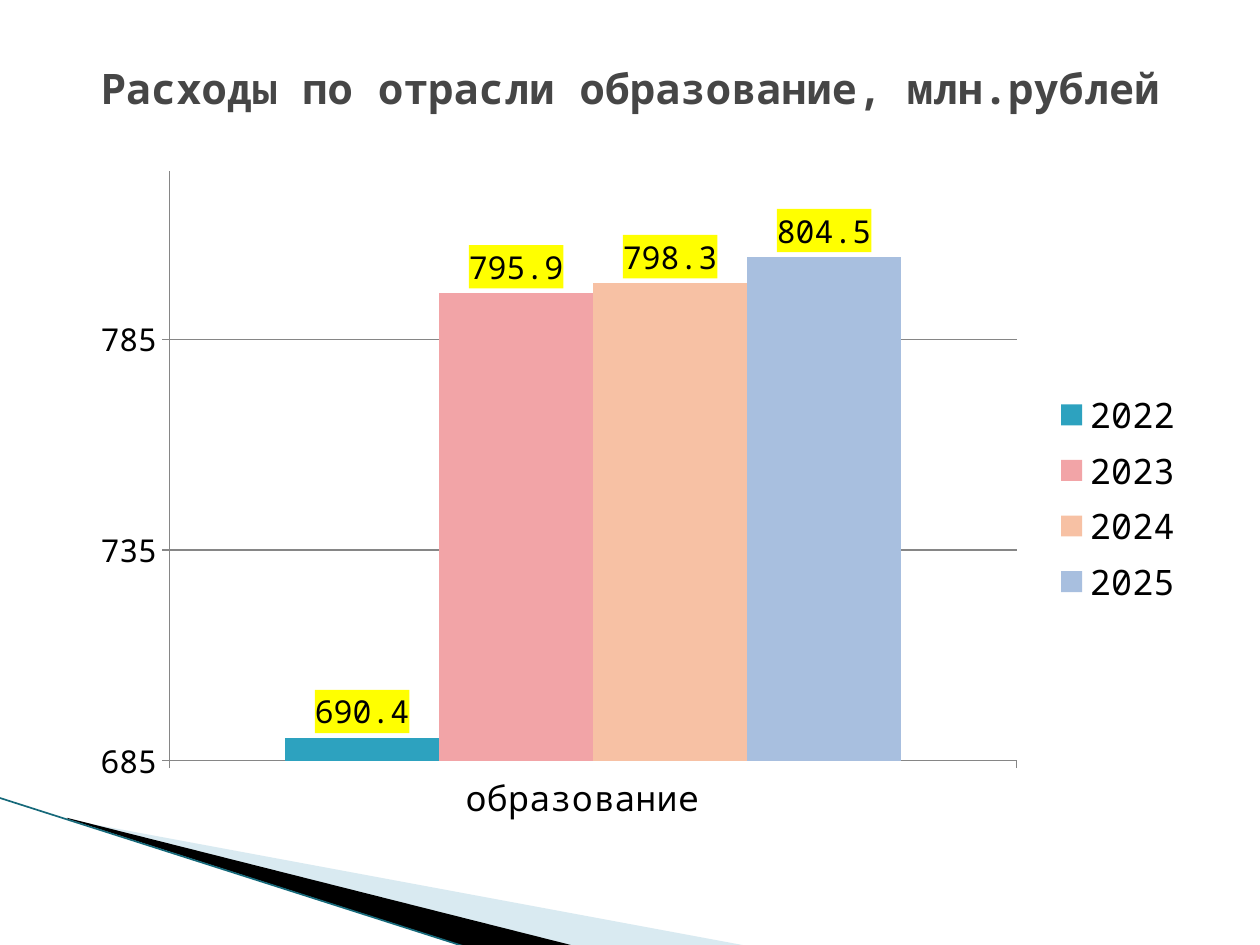
import pptx
import pptx.chart.data
import pptx.dml.color
import pptx.enum.chart
import pptx.enum.shapes
import pptx.enum.text
import pptx.oxml
import pptx.oxml.ns
import pptx.util

Pt = pptx.util.Pt
RGBColor = pptx.dml.color.RGBColor
qn = pptx.oxml.ns.qn

FONT = "Noto Sans Mono"
BLACK = RGBColor(0x00, 0x00, 0x00)
TITLE_GRAY = RGBColor(0x46, 0x46, 0x46)
AXIS_GRAY = RGBColor(0x86, 0x86, 0x86)
PALE_BLUE = RGBColor(0xA0, 0xCB, 0xDC)
EDGE_TEAL = RGBColor(0x16, 0x69, 0x7A)
TEAL = RGBColor(0x2D, 0xA2, 0xBF)
PINK = RGBColor(0xF2, 0xA4, 0xA7)
PEACH = RGBColor(0xF7, 0xC1, 0xA4)
BLUE = RGBColor(0xA8, 0xBF, 0xDF)
NAMESPACES = pptx.oxml.ns.nsdecls("c", "a")

presentation = pptx.Presentation()
presentation.slide_width = Pt(720)
presentation.slide_height = Pt(540)
slide = presentation.slides.add_slide(presentation.slide_layouts[6])

wedges = [
    ([(39.6, 468.5), (428, 540.7), (328.3, 540.7), (39.6, 468)],
     (56.2, 393.8, 299.5, 113.8), PALE_BLUE, 40),
    ([(38.2, 467.3), (329, 540.7), (267.8, 541.4), (38.9, 468)],
     (-4.3, 455.8, 299.5, 66.2), BLACK, 100),
]
for points, frame, color, opacity in wedges:
    builder = slide.shapes.build_freeform(*points[0], scale=Pt(1))
    builder.add_line_segments(points[1:], close=True)
    wedge = builder.convert_to_shape()
    wedge.left, wedge.top, wedge.width, wedge.height = [Pt(length) for length in frame]
    outline = wedge.element.spPr.find(".//" + qn("a:pathLst"))[0]
    outline.set("w", str(wedge.width))
    outline.set("h", str(wedge.height))
    for vertex, (x, y) in zip(outline.iter(qn("a:pt")), points):
        vertex.set("x", str(Pt(x) - wedge.left))
        vertex.set("y", str(Pt(y) - wedge.top))
    wedge.shadow.inherit = False
    wedge.fill.solid()
    wedge.fill.fore_color.rgb = color
    wedge.line.fill.background()
    if opacity < 100:
        fill_color = wedge.element.spPr.find(qn("a:solidFill"))[0]
        alpha = pptx.oxml.parse_xml(f'<a:alpha {NAMESPACES} val="{opacity * 1000}"/>')
        fill_color.append(alpha)

edge = slide.shapes.add_connector(
    pptx.enum.shapes.MSO_CONNECTOR.STRAIGHT, Pt(-0.7), Pt(455.8), Pt(267.1), Pt(541.4)
)
edge.line.color.rgb = EDGE_TEAL
edge.line.width = Pt(0.95)
edge.element.spPr.append(pptx.oxml.parse_xml(f"<a:effectLst {NAMESPACES}/>"))

chart_data = pptx.chart.data.CategoryChartData(number_format="0.0")
chart_data.categories = ["образование "]
for year, spending in [("2022", 690.4), ("2023", 795.9), ("2024", 798.3), ("2025", 804.5)]:
    chart_data.add_series(year, [spending])
chart = slide.shapes.add_chart(
    pptx.enum.chart.XL_CHART_TYPE.COLUMN_CLUSTERED,
    Pt(36), Pt(78.6), Pt(648), Pt(412.3), chart_data,
).chart
chart.has_title = False
chart.font.name = FONT
chart.font.size = Pt(18)
chart.font.color.rgb = BLACK

chart.has_legend = True
chart.legend.position = pptx.enum.chart.XL_LEGEND_POSITION.RIGHT
chart.legend.include_in_layout = False
chart.legend.font.size = Pt(20)

category_axis, value_axis = chart.category_axis, chart.value_axis
category_axis.tick_labels.font.size = Pt(20)
value_axis.minimum_scale = 685
value_axis.maximum_scale = 825
value_axis.major_unit = 50
value_axis.has_major_gridlines = True
value_axis.tick_labels.number_format = "0"
value_axis.tick_labels.number_format_is_linked = False
for axis in (category_axis, value_axis):
    axis.major_tick_mark = pptx.enum.chart.XL_TICK_MARK.OUTSIDE
for ruled in (category_axis, value_axis, value_axis.major_gridlines):
    ruled.format.line.color.rgb = AXIS_GRAY
    ruled.format.line.width = Pt(0.75)

plot = chart.plots[0]
plot.gap_width = 150
plot.overlap = 0
plot.vary_by_categories = False
for series, color in zip(plot.series, [TEAL, PINK, PEACH, BLUE]):
    series.format.fill.solid()
    series.format.fill.fore_color.rgb = color
    labels = series.data_labels
    labels.show_value = True
    labels.position = pptx.enum.chart.XL_LABEL_POSITION.OUTSIDE_END
    labels.font.size = Pt(18)
    label_fill = pptx.oxml.parse_xml(
        f'<c:spPr {NAMESPACES}><a:solidFill><a:srgbClr val="FFFF00"/></a:solidFill></c:spPr>'
    )
    labels._element.find(qn("c:txPr")).addprevious(label_fill)

plot_area = chart._chartSpace.chart.plotArea
for layout in plot_area.findall(qn("c:layout")):
    plot_area.remove(layout)
plot_area.insert(0, pptx.oxml.parse_xml(
    f'<c:layout {NAMESPACES}><c:manualLayout><c:layoutTarget val="inner"/>'
    '<c:xMode val="edge"/><c:yMode val="edge"/><c:x val="0.094"/><c:y val="0.046"/>'
    '<c:w val="0.747"/><c:h val="0.818"/></c:manualLayout></c:layout>'
))

title = slide.shapes.add_textbox(Pt(36), Pt(21.6), Pt(648), Pt(57))
title.text_frame.word_wrap = True
title.text_frame.vertical_anchor = pptx.enum.text.MSO_ANCHOR.MIDDLE
title.text_frame.text = "Расходы по отрасли образование, млн.рублей"
paragraph = title.text_frame.paragraphs[0]
paragraph.alignment = pptx.enum.text.PP_ALIGN.CENTER
title_font = paragraph.runs[0].font
title_font.name = FONT
title_font.size = Pt(24)
title_font.bold = True
title_font.color.rgb = TITLE_GRAY

presentation.save("out.pptx")
